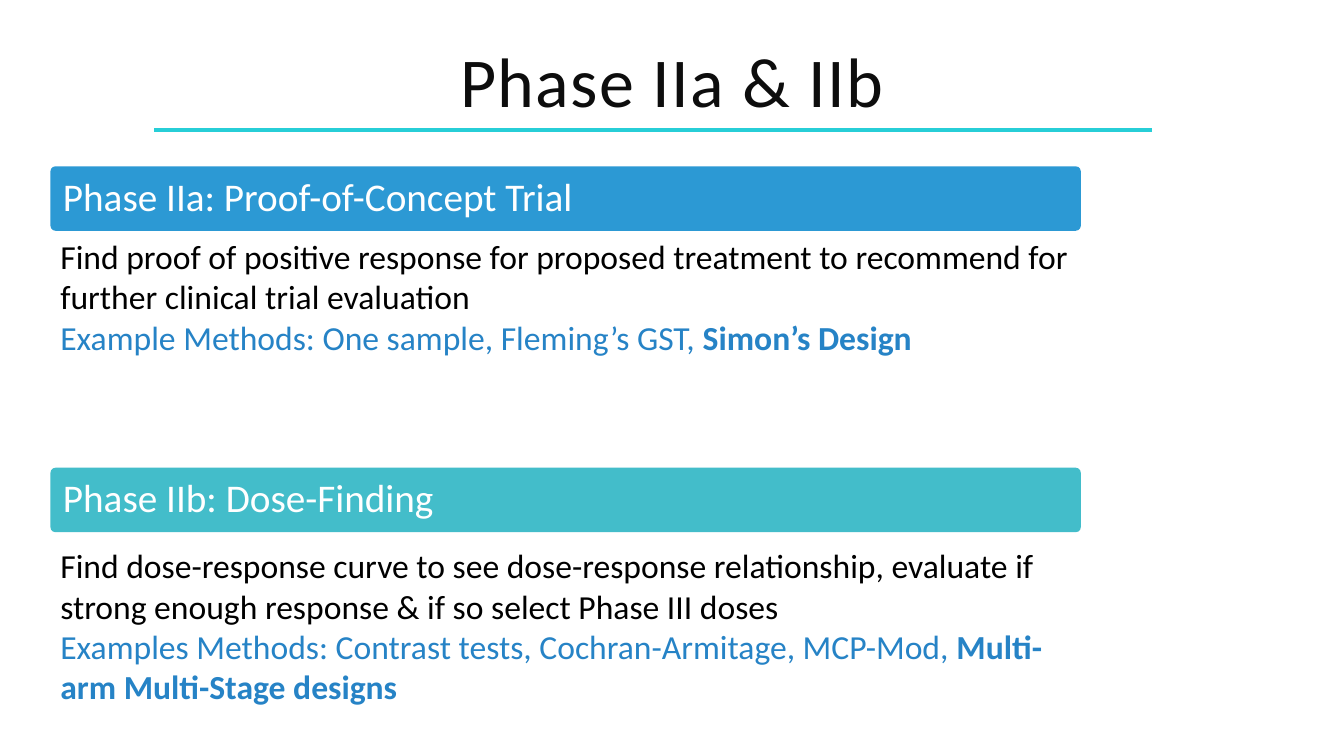
from lxml import etree
from pptx import Presentation
from pptx import util as u
from pptx.dml.color import RGBColor
from pptx.enum import shapes, text
from pptx.oxml.ns import qn

COLORS = {"rule": "27CED7", "title": "0D0D0D", "body": "000000",
          "method": "2683C6", "white": "FFFFFF",
          "phase_a": "2C99D4", "phase_b": "43BDCA"}
LEFT, WIDTH = 0.5, 10.22

PHASES = [
    {"heading": "Phase IIa: Proof-of-Concept Trial", "fill": "phase_a",
     "banner_top": 1.65, "body_top": 2.29, "body_height": 1.31,
     "goal": "Find proof of positive response for proposed treatment to "
             "recommend for further clinical trial evaluation",
     "methods": "Example Methods: One sample, Fleming’s GST, ",
     "highlight": "Simon’s Design"},
    {"heading": "Phase IIb: Dose-Finding", "fill": "phase_b",
     "banner_top": 4.64, "body_top": 5.36, "body_height": 1.72,
     "goal": "Find dose-response curve to see dose-response relationship, "
             "evaluate if strong enough response & if so select Phase III doses",
     "methods": "Examples Methods: Contrast tests, Cochran-Armitage, MCP-Mod, ",
     "highlight": "Multi-arm Multi-Stage designs"},
]


def color(name):
    return RGBColor.from_string(COLORS[name])


def add_span(para, words, size, color_name, bold=False):
    span = para.add_run()
    span.text = words
    for key, value in {"name": "Calibri", "size": u.Pt(size), "bold": bold}.items():
        setattr(span.font, key, value)
    span.font.color.rgb = color(color_name)
    return span


deck = Presentation()
deck.slide_width, deck.slide_height = u.Inches(13.33), u.Inches(7.5)
page = deck.slides.add_slide(deck.slide_layouts[5])

# Title and the rule under it
rule = page.shapes.add_connector(
    shapes.MSO_CONNECTOR.STRAIGHT,
    u.Inches(1.53), u.Inches(1.29), u.Inches(11.43), u.Inches(1.29))
rule.line.color.rgb = color("rule")
rule.line.width = u.Pt(3)
etree.SubElement(rule._element.spPr, qn("a:effectLst"))

title = page.shapes.title
for key, value in {"left": 1.67, "top": 0.4, "width": 10, "height": 0.93}.items():
    setattr(title, key, u.Inches(value))
title.text_frame.vertical_anchor = text.MSO_ANCHOR.MIDDLE
para = title.text_frame.paragraphs[0]
para.alignment = text.PP_ALIGN.CENTER
para.line_spacing = 0.8
span = add_span(para, "Phase IIa & IIb", 50, "title")
span.font._element.set("spc", "100")

# One banner and one description for each phase
for phase in PHASES:
    banner = page.shapes.add_shape(
        shapes.MSO_SHAPE.ROUNDED_RECTANGLE, u.Inches(LEFT),
        u.Inches(phase["banner_top"]), u.Inches(WIDTH), u.Inches(0.64))
    banner.adjustments[0] = 0.08
    banner.shadow.inherit = False
    banner.fill.solid()
    banner.fill.fore_color.rgb = color(phase["fill"])
    banner.line.fill.background()
    frame = banner.text_frame
    frame.word_wrap = True
    frame.vertical_anchor = text.MSO_ANCHOR.MIDDLE
    frame.margin_left = u.Inches(0.11)
    para = frame.paragraphs[0]
    para.alignment = text.PP_ALIGN.LEFT
    para.line_spacing = 0.9
    add_span(para, phase["heading"], 28, "white")

    box = page.shapes.add_textbox(
        u.Inches(LEFT), u.Inches(phase["body_top"]),
        u.Inches(WIDTH), u.Inches(phase["body_height"]))
    box.text_frame.word_wrap = True
    box.text_frame.auto_size = text.MSO_AUTO_SIZE.SHAPE_TO_FIT_TEXT
    para = box.text_frame.paragraphs[0]
    add_span(para, phase["goal"], 24, "body")
    para.add_line_break()
    add_span(para, phase["methods"], 24, "method")
    add_span(para, phase["highlight"], 24, "method", bold=True)

deck.save("out.pptx")
